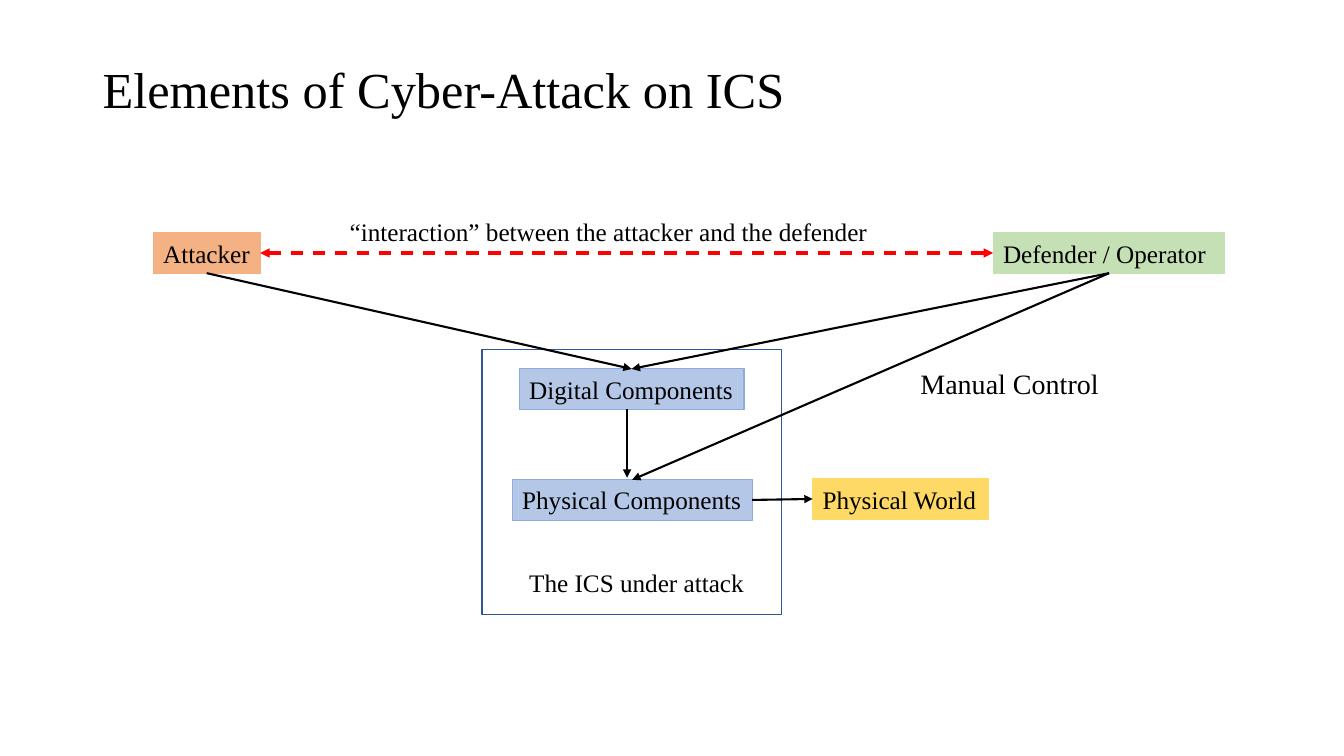
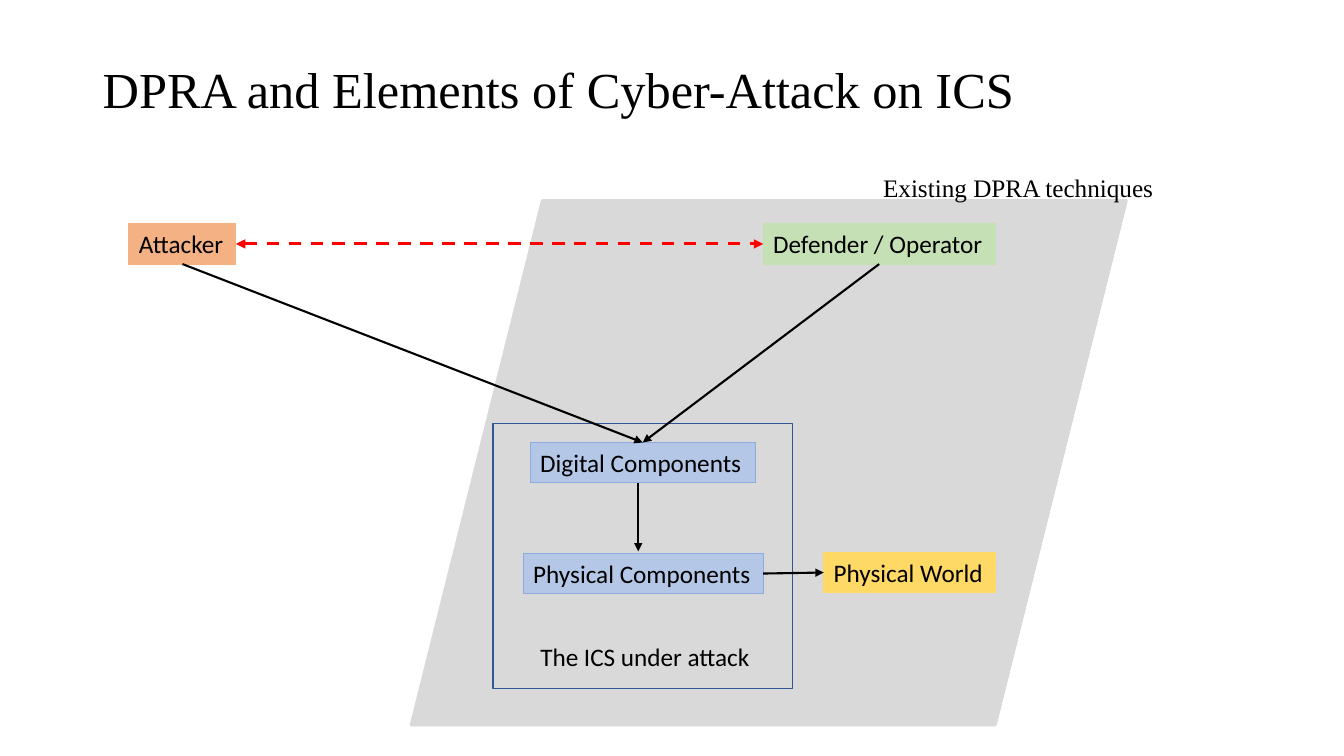
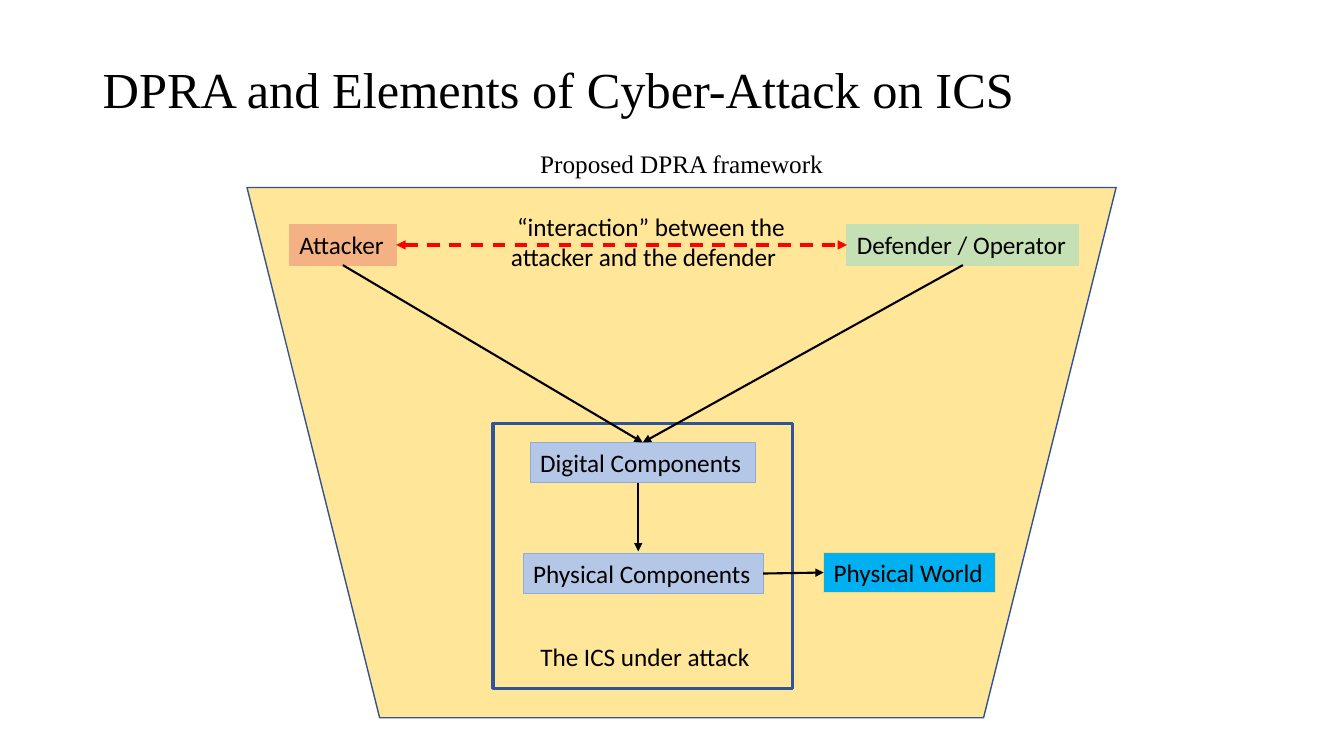
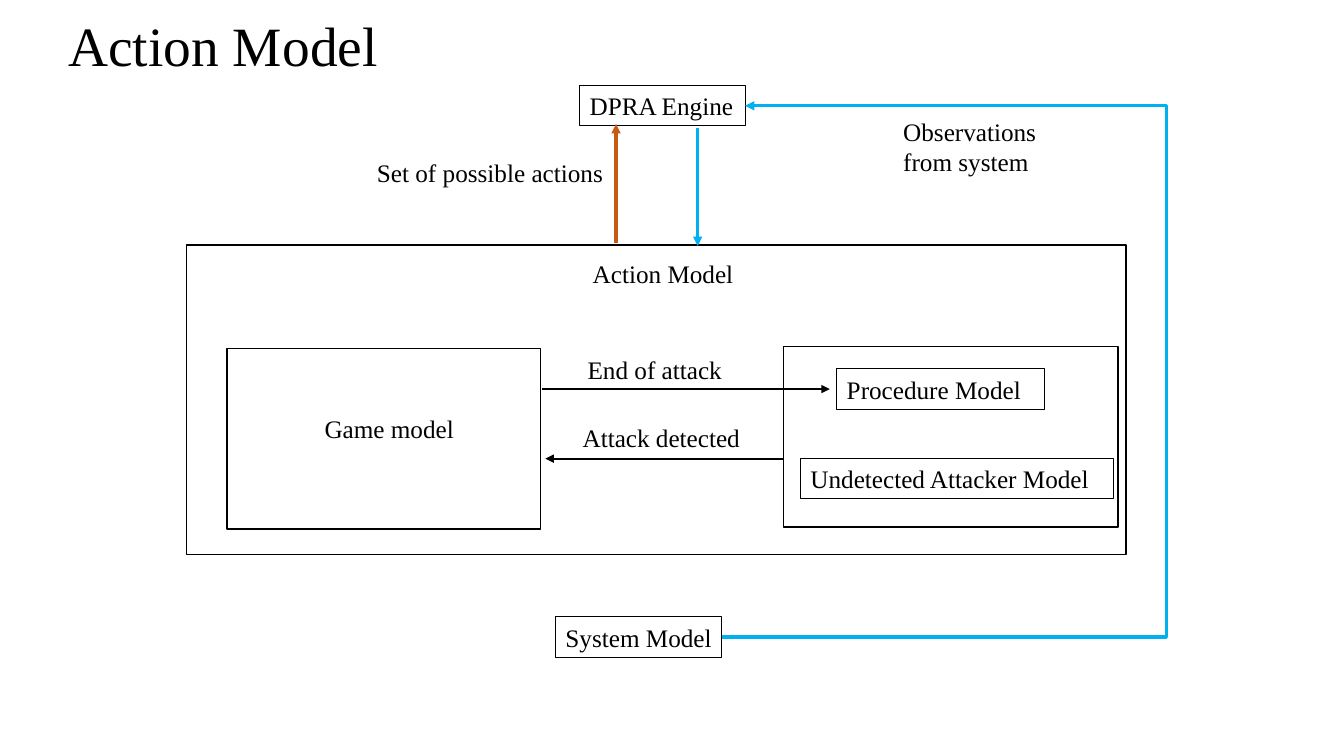
from lxml import etree
from pptx import Presentation
from pptx.dml.color import RGBColor
from pptx.enum.dml import MSO_LINE
from pptx.enum.shapes import MSO_CONNECTOR, MSO_SHAPE
from pptx.enum.text import MSO_ANCHOR
from pptx.oxml.ns import qn
from pptx.util import Inches, Pt

RECTANGLE = MSO_SHAPE.RECTANGLE
PARALLELOGRAM = MSO_SHAPE.PARALLELOGRAM
TRAPEZOID = MSO_SHAPE.TRAPEZOID
STRAIGHT = MSO_CONNECTOR.STRAIGHT
ELBOW = MSO_CONNECTOR.ELBOW
MIDDLE = MSO_ANCHOR.MIDDLE
DASH = MSO_LINE.DASH

# Connection sites of a rectangle
TOP, LEFT, BOTTOM, RIGHT = range(4)

# Shared style; all lengths are on a grid of one-inch cells
SERIF, SANS = "Times New Roman", "Calibri"
BLACK, RED, SKY, RUST = "000000", "FF0000", "00B0F0", "C55A11"
GRAY, CREAM, NAVY, STEEL = "D9D9D9", "FFE699", "2F5597", "325491"
BLUE, BLUE_EDGE = "B4C7E7", "8FAADC"
GOLD, GREEN, ORANGE = "FFD966", "C5E0B4", "F4B183"
ROW = 0.4  # height of a one-line box
INTERACTION = "“interaction” between the attacker and the defender"


def color(value):
    return RGBColor.from_string(value)


def write(shape, text, font=SERIF, size=18):
    """Left-aligned black text; the right inset is left free for the last letter."""
    frame = shape.text_frame
    frame.word_wrap = True
    frame.margin_right = 0
    frame.vertical_anchor = MIDDLE
    frame.text = text
    para = frame.paragraphs[0]
    para.font.name = font
    para.font.size = Pt(size)
    para.font.color.rgb = color(BLACK)
    return para


def label(page, text, left, top, width, height=ROW, font=SERIF, size=18):
    box = page.shapes.add_textbox(*map(Inches, (left, top, width, height)))
    return write(box, text, font, size)


def block(page, area, fill=None, edge=BLACK, weight=0.75, text=None,
          font=SERIF, kind=RECTANGLE):
    shape = page.shapes.add_shape(kind, *map(Inches, area))
    shape.shadow.inherit = False
    if fill:
        shape.fill.solid()
        shape.fill.fore_color.rgb = color(fill)
    else:
        shape.fill.background()
    shape.line.color.rgb = color(edge)
    shape.line.width = Pt(weight)
    if text:
        para = write(shape, text, font)
        para.alignment = 1
    return shape


def arrow(page, start, end, ink=BLACK, weight=1.5, both=False, kind=STRAIGHT):
    connector = page.shapes.add_connector(kind, *map(Inches, start + end))
    connector.line.color.rgb = color(ink)
    connector.line.width = Pt(weight)
    outline = connector.line._get_or_add_ln()
    for tag in ("a:headEnd", "a:tailEnd") if both else ("a:tailEnd",):
        etree.SubElement(outline, qn(tag), type="triangle")
    etree.SubElement(connector._element.spPr, qn("a:effectLst"))
    return connector


def link(page, source, source_site, target, target_site, **style):
    """Arrow glued to two boxes."""
    connector = arrow(page, (0, 0), (1, 1), **style)
    connector.begin_connect(source, source_site)
    connector.end_connect(target, target_site)
    return connector


def new_page(deck, title, area=(0.92, 0.4, 11.5, 1.03), size=36):
    page = deck.slides.add_slide(deck.slide_layouts[6])
    label(page, title, *area, size=size).line_spacing = 0.9
    return page


def ics_panel(page, left, top, font, weight, world_fill):
    """The system under attack, with the physical world beside it."""
    block(page, (left, top, 2.97, 2.63), edge=NAVY, weight=weight)
    label(page, "The ICS under attack", left + 0.37, top + 2.11, 2.35, font=font)
    digital = block(page, (left + 0.37, top + 0.19, 2.23, ROW), BLUE, BLUE_EDGE,
                    text="Digital Components", font=font)
    physical = block(page, (left + 0.3, top + 1.29, 2.38, ROW), BLUE, BLUE_EDGE,
                     text="Physical Components", font=font)
    world_width = 1.74 if font == SERIF else 1.7
    world = block(page, (left + 3.28, top + 1.28, world_width, ROW), world_fill,
                  GOLD, text="Physical World", font=font)
    arrow(page, (left + 1.44, top + 0.59), (left + 1.44, top + 1.27))
    link(page, physical, RIGHT, world, LEFT)
    return digital, physical


def attack_diagram(page, panel, attacker_left, defender_left, actor_top,
                   font=SANS, weight=1, world_fill=GOLD):
    """Two actors above the panel; returns the defender and physical boxes."""
    digital, physical = ics_panel(page, *panel, font, weight, world_fill)
    attacker = block(page, (attacker_left, actor_top, 1.06, ROW), ORANGE, ORANGE,
                     text="Attacker", font=font)
    defender = block(page, (defender_left, actor_top, 2.3, ROW), GREEN, GREEN,
                     text="Defender / Operator", font=font)
    for actor in (attacker, defender):
        link(page, actor, BOTTOM, digital, TOP)
    duel = link(page, attacker, RIGHT, defender, LEFT, ink=RED, weight=2.25, both=True)
    duel.line.dash_style = DASH
    return defender, physical


def elements_slide(deck):
    page = new_page(deck, "Elements of Cyber-Attack on ICS")
    defender, physical = attack_diagram(page, (4.78, 3.47), 1.52, 9.85, 2.31, SERIF)
    label(page, INTERACTION, 3.37, 2.1, 5.4)
    link(page, defender, BOTTOM, physical, TOP)
    label(page, "Manual Control", 9.03, 3.58, 1.98, 0.44, size=20)


def existing_slide(deck):
    page = new_page(deck, "DPRA and Elements of Cyber-Attack on ICS")
    block(page, (4.08, 1.99, 7.09, 5.2), GRAY, GRAY, 2.25, kind=PARALLELOGRAM)
    attack_diagram(page, (4.89, 4.2), 1.28, 7.57, 2.22)
    label(page, "Existing DPRA techniques", 8.66, 1.66, 2.91)


def proposed_slide(deck):
    page = new_page(deck, "DPRA and Elements of Cyber-Attack on ICS")
    funnel = block(page, (2.45, 1.86, 8.62, 5.26), CREAM, STEEL, 1, kind=TRAPEZOID)
    funnel.rotation = 180
    attack_diagram(page, (4.89, 4.2), 2.87, 8.4, 2.23, weight=2.25, world_fill=SKY)
    label(page, "Proposed DPRA framework", 5.26, 1.42, 3.03)
    note = label(page, INTERACTION, 4.97, 2.04, 3.07, 0.71, font=SANS)
    note._p.get_or_add_pPr().set("indent", str(Inches(0.06)))


def feedback_loop(page, start, end, reach):
    """Elbow arrow that runs out to the column at reach and back."""
    loop = arrow(page, start, end, SKY, 2.25, kind=ELBOW)
    guides = loop._element.spPr.find(qn("a:prstGeom")).get_or_add_avLst()
    share = (reach - start[0]) / (end[0] - start[0])
    etree.SubElement(guides, qn("a:gd"), name="adj1", fmla=f"val {round(share * 100000)}")


def action_model_slide(deck):
    page = new_page(deck, "Action Model", (0.58, 0.24, 11.5, 0.49), 39.6)
    # Frames: action model, game model, procedures
    for area in ((1.85, 2.43, 9.32, 3.07), (2.25, 3.46, 3.11, 1.79),
                 (7.77, 3.44, 3.32, 1.79)):
        block(page, area, weight=1)
    # Boxed names
    for text, left, top, width in (
            ("DPRA Engine", 5.75, 0.85, 1.64), ("System Model", 5.51, 6.12, 1.65),
            ("Procedure Model", 8.3, 3.66, 2.06),
            ("Undetected Attacker Model", 7.94, 4.55, 3.1)):
        block(page, (left, top, width, ROW), text=text)
    # Free labels
    for text, left, top, width in (
            ("Action Model", 5.78, 2.51, 1.61), ("Game model", 3.12, 4.05, 1.52),
            ("End of attack", 5.73, 3.47, 1.54), ("Attack detected", 5.68, 4.14, 1.82),
            ("Set of possible actions", 3.64, 1.51, 2.48)):
        label(page, text, left, top, width)
    label(page, "Observations from system", 8.86, 1.1, 1.77, 0.71)
    # Flows
    arrow(page, (5.38, 3.86), (8.23, 3.86))
    arrow(page, (7.77, 4.55), (5.41, 4.55))
    arrow(page, (6.11, 2.41), (6.11, 1.23), RUST, 2.25)
    arrow(page, (6.92, 1.27), (6.92, 2.44), SKY, 2.25)
    feedback_loop(page, (7.16, 6.32), (7.39, 1.05), 11.57)


def main():
    deck = Presentation()
    deck.slide_width, deck.slide_height = Inches(13.33), Inches(7.5)
    for build in (elements_slide, existing_slide, proposed_slide, action_model_slide):
        build(deck)
    deck.save("out.pptx")


if __name__ == "__main__":
    main()
